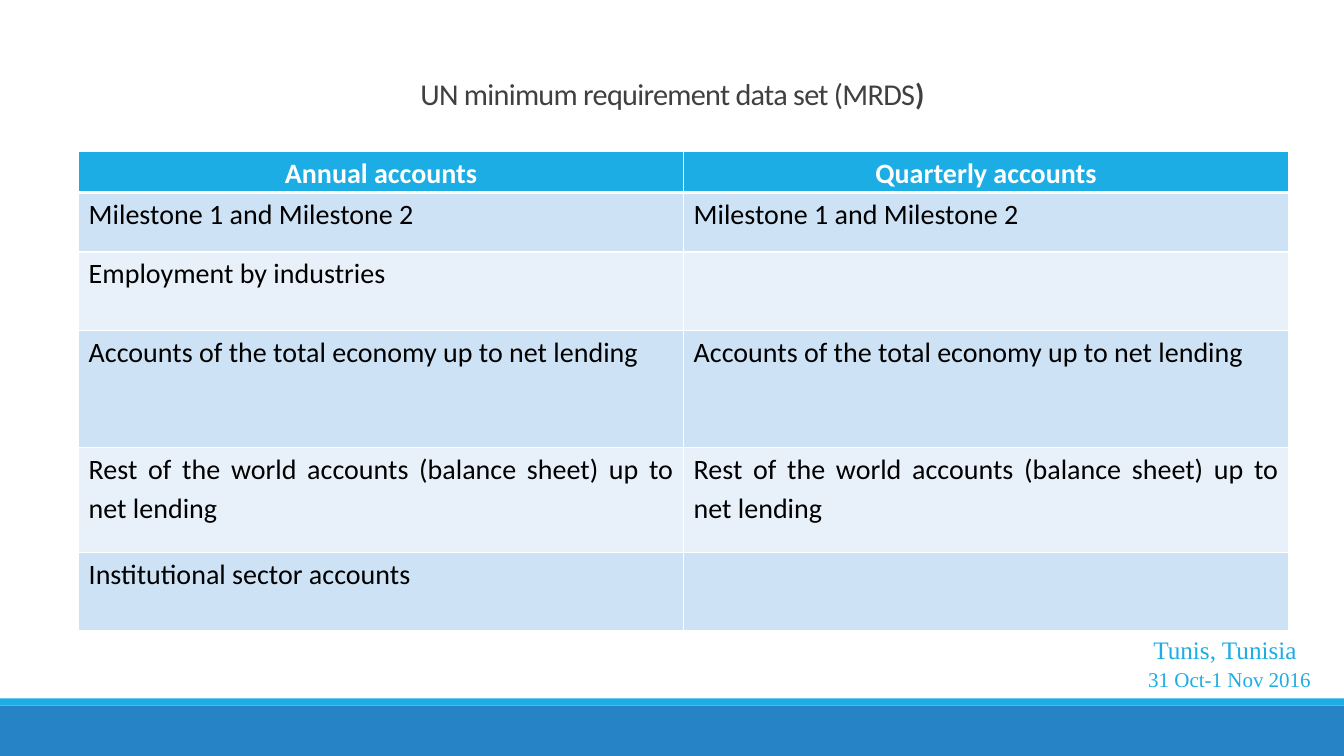
from dataclasses import dataclass

from lxml.etree import SubElement
from pptx import Presentation
from pptx.dml.color import RGBColor
from pptx.enum.shapes import MSO_SHAPE as Shape
from pptx.enum.text import MSO_ANCHOR as Anchor, MSO_AUTO_SIZE as AutoSize, PP_ALIGN as Align
from pptx.oxml.ns import qn
from pptx.util import Inches, Pt


@dataclass(frozen=True)
class Theme:
    accent: str = "1CADE4"
    footer: str = "2683C6"
    bands: tuple = ("CDE3F5", "E8F1FA")
    white: str = "FFFFFF"
    black: str = "000000"
    heading: str = "404040"
    body_font: str = "Calibri"
    venue_font: str = "Times New Roman"
    heading_size: float = 21.6
    table_size: float = 20
    place_size: float = 18
    date_size: float = 15


class SlideBuilder:
    def __init__(self, page, theme):
        self.page = page
        self.theme = theme

    def add_span(self, para, text, font, size, color, bold=False, tracking=0):
        span = para.add_run()
        span.text = text
        span.font.name = font
        span.font.size = Pt(size)
        span.font.bold = bold
        span.font.color.rgb = RGBColor.from_string(color)
        if tracking:
            span._r.get_or_add_rPr().set("spc", str(round(tracking * 100)))

    def bar(self, top, height, color):
        bar = self.page.shapes.add_shape(
            Shape.RECTANGLE, 0, Inches(top), Inches(13.33), Inches(height))
        bar.shadow.inherit = False
        bar.fill.solid()
        bar.fill.fore_color.rgb = RGBColor.from_string(color)
        bar.line.fill.background()

    def text_box(self, left, top, width, height):
        box = self.page.shapes.add_textbox(
            Inches(left), Inches(top), Inches(width), Inches(height))
        para = box.text_frame.paragraphs[0]
        para.alignment = Align.CENTER
        return box.text_frame, para

    def title(self, text, closing):
        frame, para = self.text_box(0.67, 0.58, 12, 0.58)
        frame.word_wrap = True
        frame.vertical_anchor = Anchor.BOTTOM
        para.line_spacing = 0.85
        for words, bold in ((text, False), (closing, True)):
            self.add_span(para, words, self.theme.body_font, self.theme.heading_size,
                          self.theme.heading, bold, tracking=-0.5)

    def venue_line(self, text, left, top, width, height, size):
        frame, para = self.text_box(left, top, width, height)
        frame.word_wrap = False
        frame.auto_size = AutoSize.SHAPE_TO_FIT_TEXT
        self.add_span(para, text, self.theme.venue_font, size, self.theme.accent)

    def border(self, cell, side, width):
        line = SubElement(cell._tc.get_or_add_tcPr(), qn(f"a:{side}"), w=str(Pt(width)))
        fill = SubElement(line, qn("a:solidFill"))
        SubElement(fill, qn("a:srgbClr"), val=self.theme.white)

    def cell(self, cell, text, row):
        header = row == 0
        cell.margin_left = cell.margin_right = Inches(0.1)
        cell.margin_top = cell.margin_bottom = 0
        widths = {"lnL": 1, "lnR": 1, "lnT": 3 if row == 1 else 1, "lnB": 3 if header else 1}
        for side, width in widths.items():
            self.border(cell, side, width)
        cell.fill.solid()
        color = self.theme.accent if header else self.theme.bands[(row - 1) % 2]
        cell.fill.fore_color.rgb = RGBColor.from_string(color)
        if text:
            para = cell.text_frame.paragraphs[0]
            para.alignment = Align.CENTER if header else Align.JUSTIFY
            para.line_spacing = 1.15
            self.add_span(para, text, self.theme.body_font, self.theme.table_size,
                          self.theme.white if header else self.theme.black, header)

    def table(self, rows, heights, left, top, column_width):
        columns = len(rows[0])
        table = self.page.shapes.add_table(
            len(rows), columns, Inches(left), Inches(top),
            Inches(column_width * columns), Inches(sum(heights))).table
        for column in table.columns:
            column.width = Inches(column_width)
        for row, (texts, height) in enumerate(zip(rows, heights)):
            table.rows[row].height = Inches(height)
            for column, text in enumerate(texts):
                self.cell(table.cell(row, column), text, row)


def main():
    deck = Presentation()
    deck.slide_width = Inches(13.33)
    deck.slide_height = Inches(7.5)
    theme = Theme()
    slide = SlideBuilder(deck.slides.add_slide(deck.slide_layouts[6]), theme)

    slide.bar(7, 0.5, theme.footer)
    slide.bar(6.93, 0.07, theme.accent)
    slide.venue_line("Tunis, Tunisia", 11.33, 6.24, 1.64, 0.4, theme.place_size)
    slide.venue_line("31 Oct-1 Nov 2016", 11.28, 6.56, 1.83, 0.35, theme.date_size)
    slide.title("UN minimum requirement data set (MRDS", ")")

    milestones = "Milestone 1 and Milestone 2"
    economy = "Accounts of the total economy up to net lending"
    world = "Rest of the world accounts (balance sheet) up to net lending"
    accounts = [
        ("Annual accounts", "Quarterly accounts"),
        (milestones, milestones),
        ("Employment by industries", ""),
        (economy, economy),
        (world, world),
        ("Institutional sector accounts", ""),
    ]
    slide.table(accounts, [0.41, 0.59, 0.78, 1.16, 1.04, 0.78], 0.78, 1.5, 6)
    deck.save("out.pptx")


if __name__ == "__main__":
    main()
